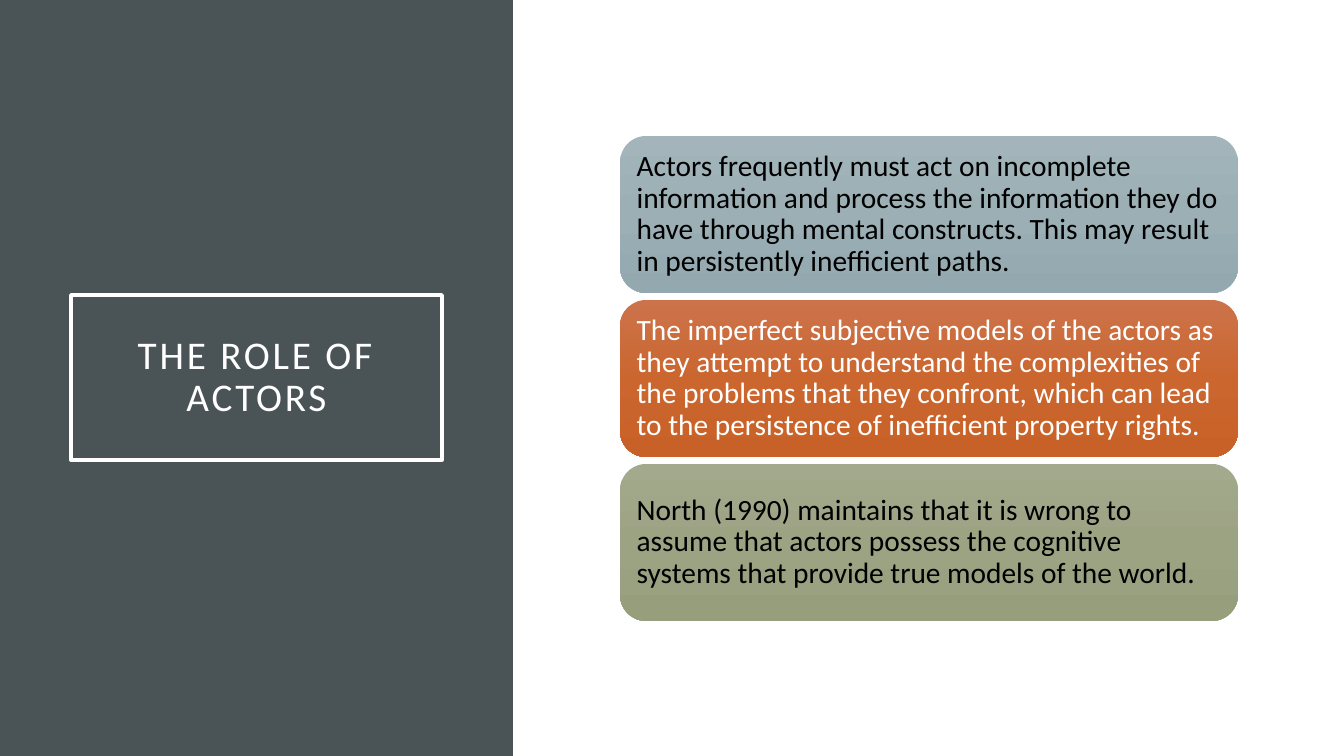
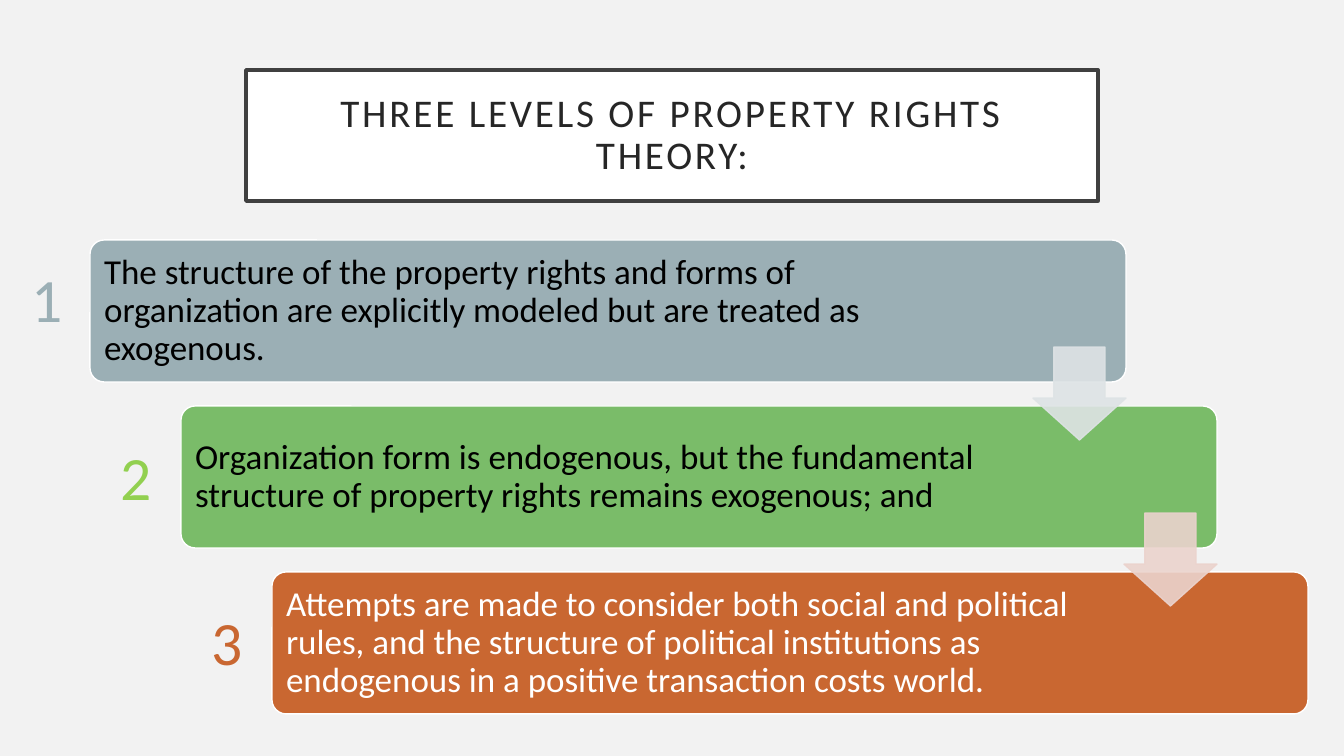
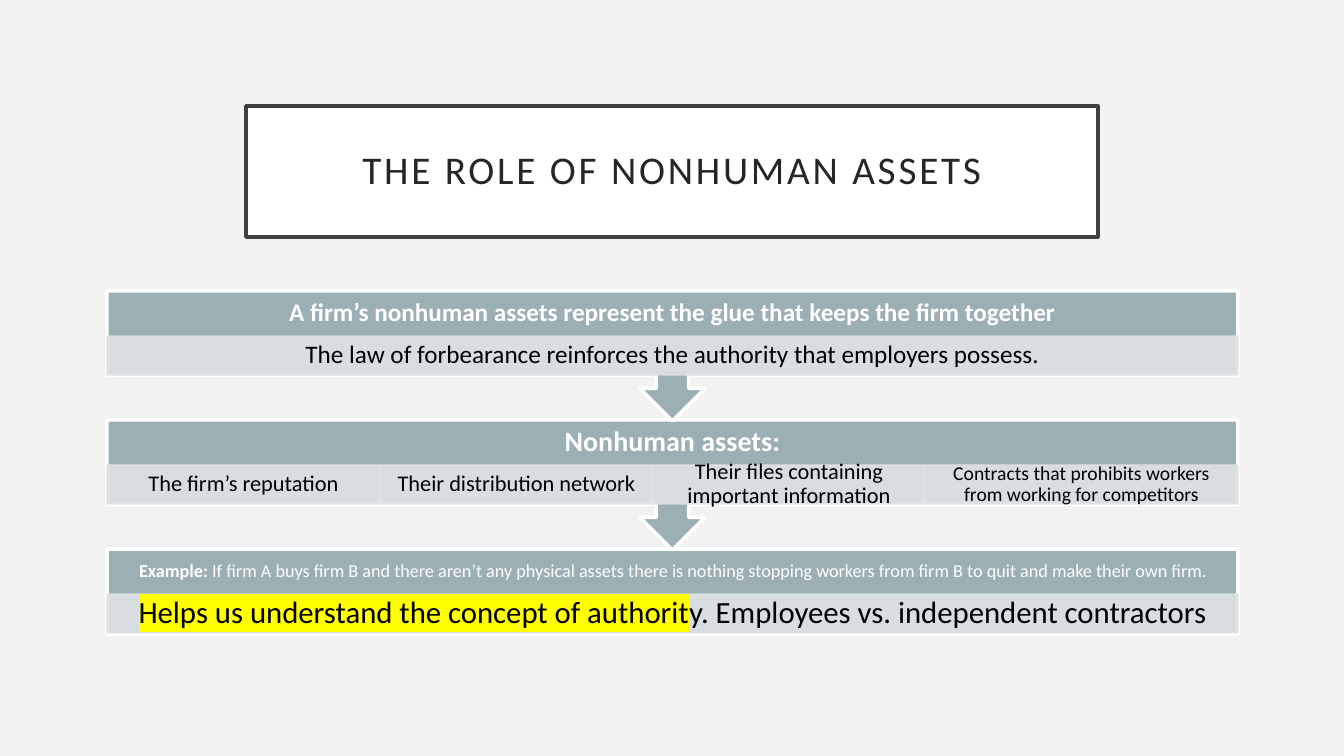
from copy import deepcopy
from itertools import accumulate

from lxml.etree import SubElement
from pptx import Presentation
from pptx.dml.color import RGBColor
from pptx.enum.shapes import MSO_SHAPE
from pptx.enum.text import MSO_ANCHOR, PP_ALIGN
from pptx.oxml import parse_xml
from pptx.oxml.ns import nsdecls, qn
from pptx.util import Emu, Pt

EMU_PER_PX = 914400 / 100.8
SLIDE_WIDTH, SLIDE_HEIGHT = 1344, 756
FONT = "Calibri"

WHITE, BLACK = "FFFFFF", "000000"
PAPER = "F2F2F2"
SLATE = "4A5356"
TITLE_LINE, TITLE_TEXT = "404040", "262626"
BLUE_GRAY, PALE_BLUE = "9BAFB5", "DEE3E5"
GREEN, LIME = "7ABC69", "92D050"
ORANGE, PALE_ORANGE = "C96731", "EBD3CD"
YELLOW = "FFFF00"


def px(length):
    return Emu(round(length * EMU_PER_PX))


def rgb(color):
    return RGBColor.from_string(color)


def add_slide(presentation, background):
    slide = presentation.slides.add_slide(presentation.slide_layouts[6])
    slide.background.fill.solid()
    slide.background.fill.fore_color.rgb = rgb(background)
    return slide


def set_alpha(fill, percent):
    """Make a solid fill, of a shape or of a line, partly transparent."""
    color = fill._xPr.find(qn("a:solidFill"))[0]
    SubElement(color, qn("a:alpha")).set("val", str(percent * 1000))


def set_gradient(shape, colors):
    """Fill from top to bottom with three evenly spaced colours."""
    shape.fill.gradient()
    shape.fill.gradient_angle = 270
    stop_list = shape._element.spPr.find(qn("a:gradFill")).find(qn("a:gsLst"))
    stop_list.append(deepcopy(stop_list[-1]))
    for stop, color, position in zip(shape.fill.gradient_stops, colors, (0, 0.5, 1)):
        stop.color.rgb = rgb(color)
        stop.position = position


def add_box(slide, kind, box, fill=None, line=None, line_width=1, alpha=None, adjust=()):
    """Add a preset shape; a tuple as fill gives a gradient."""
    shape = slide.shapes.add_shape(kind, *map(px, box))
    shape.shadow.inherit = False
    for index, value in enumerate(adjust):
        shape.adjustments[index] = value
    if fill is None:
        shape.fill.background()
    elif isinstance(fill, tuple):
        set_gradient(shape, fill)
    else:
        shape.fill.solid()
        shape.fill.fore_color.rgb = rgb(fill)
    if line is None:
        shape.line.fill.background()
    else:
        shape.line.color.rgb = rgb(line)
        shape.line.width = Pt(line_width)
    if alpha is not None:
        set_alpha(shape.fill, alpha)
        set_alpha(shape.line.fill, alpha)
    return shape


def set_text(shape, text, size, color, align=PP_ALIGN.LEFT, margins=(10, 10, 10, 10),
             bold=False, tracking=0, line_spacing=0.9):
    """Write text, a string or a list of (text, bold, highlight); margins run left, top, right, bottom."""
    frame = shape.text_frame
    frame.word_wrap = True
    frame.vertical_anchor = MSO_ANCHOR.MIDDLE
    (frame.margin_left, frame.margin_top,
     frame.margin_right, frame.margin_bottom) = map(px, margins)
    paragraph = frame.paragraphs[0]
    paragraph.alignment = align
    paragraph.line_spacing = line_spacing
    parts = [(text, bold, None)] if isinstance(text, str) else text
    for words, is_bold, highlight in parts:
        run = paragraph.add_run()
        run.text = words
        run.font.name = FONT
        run.font.size = Pt(size)
        run.font.bold = is_bold
        run.font.color.rgb = rgb(color)
        properties = run.font._element
        if tracking:
            properties.set("spc", str(tracking * 100))
        if highlight:
            properties.find(qn("a:solidFill")).addnext(parse_xml(
                f'<a:highlight {nsdecls("a")}><a:srgbClr val="{highlight}"/></a:highlight>'))


def add_title(slide, text, box, fill=WHITE, line=TITLE_LINE, color=TITLE_TEXT):
    title = add_box(slide, MSO_SHAPE.RECTANGLE, box, fill, line, 2.5)
    set_text(title, text, 28, color, PP_ALIGN.CENTER, (20, 20, 20, 20), tracking=2)


def add_number(slide, number, left, top, color):
    shape = slide.shapes.add_textbox(*map(px, (left, top, 67, 84)))
    set_text(shape, number, 44, color, margins=(10, 5, 10, 5), line_spacing=1)


def add_detail(slide, text, size, left, top, width):
    """Add one pale cell below a band's heading."""
    cell = add_box(slide, MSO_SHAPE.RECTANGLE, (left, top, width, 39),
                   PALE_BLUE, PALE_BLUE, alpha=90)
    set_text(cell, text, size, BLACK, PP_ALIGN.CENTER, (12, 2, 12, 2))


def build_actors(presentation):
    slide = add_slide(presentation, WHITE)
    add_box(slide, MSO_SHAPE.RECTANGLE, (0, 0, 513, SLIDE_HEIGHT), SLATE)
    add_title(slide, "THE ROLE OF ACTORS", (71, 295, 371, 165), None, WHITE, WHITE)
    cards = [
        ("Actors frequently must act on incomplete information and process the information "
         "they do have through mental constructs. This may result in persistently "
         "inefficient paths.", ("A3B5BB", "9BAFB5", "93A9AF"), BLACK),
        ("The imperfect subjective models of the actors as they attempt to understand the "
         "complexities of the problems that they confront, which can lead to the persistence "
         "of inefficient property rights.", ("CC734B", "CB662F", "C86128"), WHITE),
        ("North (1990) maintains that it is wrong to assume that actors possess the cognitive "
         "systems that provide true models of the world.",
         ("A3A98C", "9CA383", "979E7C"), BLACK),
    ]
    for index, (text, gradient, color) in enumerate(cards):
        card = add_box(slide, MSO_SHAPE.ROUNDED_RECTANGLE,
                       (620, 136 + 164 * index, 618, 157), gradient)
        set_text(card, text, 21, color, margins=(9, 9, 9, 9))


def build_levels(presentation):
    slide = add_slide(presentation, PAPER)
    add_title(slide, "THREE LEVELS OF PROPERTY RIGHTS THEORY:", (246, 70, 852, 131))
    left, top, width, height = 90, 240, 1036, 142
    step_x, step_y, arrow_size = 91, 166, 93
    levels = [
        ("The structure of the property rights and forms of organization are explicitly "
         "modeled but are treated as exogenous.", BLUE_GRAY, BLACK, 155),
        ("Organization form is endogenous, but the fundamental structure of property rights "
         "remains exogenous; and", GREEN, BLACK, 195),
        ("Attempts are made to consider both social and political rules, and the structure of "
         "political institutions as endogenous in a positive transaction costs world.",
         ORANGE, WHITE, 195),
    ]
    for index, (text, fill, color, right_margin) in enumerate(levels):
        level = add_box(slide, MSO_SHAPE.ROUNDED_RECTANGLE,
                        (left + step_x * index, top + step_y * index, width, height),
                        fill, WHITE, adjust=(0.1,))
        set_text(level, text, 25, color, margins=(10, 10, right_margin, 10))
    for index, color in enumerate((PALE_BLUE, PALE_ORANGE)):
        arrow_left = left + width - arrow_size + step_x * index
        add_box(slide, MSO_SHAPE.DOWN_ARROW,
                (arrow_left, top + 107 + step_y * index, arrow_size, arrow_size),
                color, color, alpha=90, adjust=(0.55, 0.45))
    add_number(slide, "1", 22, 256, BLUE_GRAY)
    add_number(slide, "2", 111, 434, LIME)
    add_number(slide, "3", 202, 599, ORANGE)


def build_assets(presentation):
    slide = add_slide(presentation, PAPER)
    add_title(slide, "THE ROLE OF NONHUMAN ASSETS", (246, 106, 852, 131))
    left, top, width, pitch = 107, 291, 1131, 129
    callout, rectangle = (MSO_SHAPE.DOWN_ARROW_CALLOUT, 130), (MSO_SHAPE.RECTANGLE, 85)
    example = [
        ("Example: ", True, None),
        ("If firm A buys firm B and there aren’t any physical assets there is nothing stopping "
         "workers from firm B to quit and make their own firm.", False, None),
    ]
    conclusion = [
        ("Helps us understand the concept of authorit", False, YELLOW),
        ("y. Employees vs. independent contractors", False, None),
    ]
    bands = [
        (callout, "A firm’s nonhuman assets represent the glue that keeps the firm together", 18,
         [("The law of forbearance reinforces the authority that employers possess.", 18, width)]),
        (callout, "Nonhuman assets:", 20,
         [("The firm’s reputation", 16, 273),
          ("Their distribution network", 16, 273),
          ("Their files containing important information", 16, 272),
          ("Contracts that prohibits workers from working for competitors", 14, 313)]),
        (rectangle, example, 13, [(conclusion, 22, width)]),
    ]
    for index, ((kind, height), heading, size, details) in reversed(list(enumerate(bands))):
        band_top = top + pitch * index
        band = add_box(slide, kind, (left, band_top, width, height), BLUE_GRAY, WHITE, 2.5)
        set_text(band, heading, size, WHITE, PP_ALIGN.CENTER, (10, 0, 10, 39), bold=True)
        offsets = accumulate((cell[2] for cell in details), initial=left)
        for (text, text_size, cell_width), cell_left in zip(details, offsets):
            add_detail(slide, text, text_size, cell_left, band_top + 45, cell_width)


def main():
    presentation = Presentation()
    presentation.slide_width = px(SLIDE_WIDTH)
    presentation.slide_height = px(SLIDE_HEIGHT)
    build_actors(presentation)
    build_levels(presentation)
    build_assets(presentation)
    presentation.save("out.pptx")


if __name__ == "__main__":
    main()
